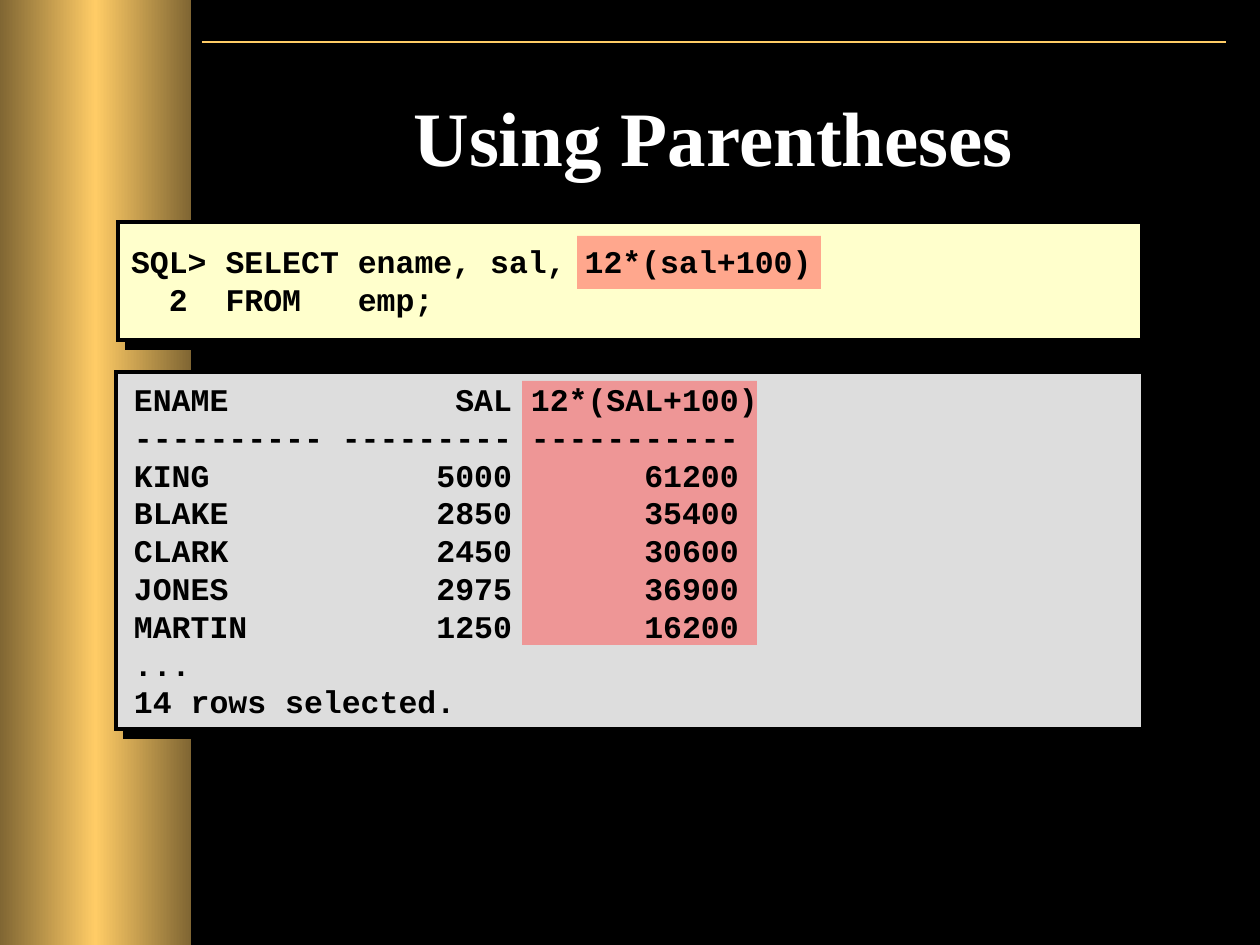
from copy import deepcopy

from lxml.etree import SubElement as sub
from pptx import Presentation
from pptx.dml.color import RGBColor as RGB
from pptx.enum.shapes import MSO_CONNECTOR as LINK, MSO_SHAPE as SHAPE
from pptx.enum.text import MSO_ANCHOR as ANCHOR, MSO_AUTO_SIZE as FIT, PP_ALIGN as ALIGN
from pptx.oxml.ns import qn
from pptx.util import Emu, Pt

SCALE = 914400 / 126
GOLD = "FFCC66"
BROWN = "806633"
QUERY = [
    "SQL> SELECT ename, sal, 12*(sal+100)",
    "  2  FROM   emp;",
]
ROWS = [
    ("KING", 5000, 61200),
    ("BLAKE", 2850, 35400),
    ("CLARK", 2450, 30600),
    ("JONES", 2975, 36900),
    ("MARTIN", 1250, 16200),
]
RESULT = [
    "ENAME            SAL 12*(SAL+100)",
    "---------- --------- -----------",
    *(f"{name:<10} {sal:>9} {total:>11}" for name, sal, total in ROWS),
    "...",
    "14 rows selected.",
]


def px(n):
    return Emu(round(n * SCALE))


def paint(color, code):
    color.rgb = RGB.from_string(code)


def write(frame, lines, size=18, font="Courier New", color="000000",
          align=ALIGN.LEFT, anchor=ANCHOR.TOP):
    frame.word_wrap = True
    frame.auto_size = FIT.NONE
    frame.vertical_anchor = anchor
    frame.margin_left = frame.margin_right = px(13)
    frame.margin_top = frame.margin_bottom = px(6)
    for i, line in enumerate(lines):
        para = frame.add_paragraph() if i else frame.paragraphs[0]
        para.alignment = align
        para.space_before = Pt(0)
        run = para.add_run()
        run.text = line
        run.font.name, run.font.size, run.font.bold = font, Pt(size), True
        paint(run.font.color, color)


def add_text(slide, box, lines, **style):
    write(slide.shapes.add_textbox(*map(px, box)).text_frame, lines, **style)


def add_rect(slide, box, fill):
    rect = slide.shapes.add_shape(SHAPE.RECTANGLE, *map(px, box))
    rect.shadow.inherit = False
    rect.line.fill.background()
    rect.fill.solid()
    paint(rect.fill.fore_color, fill)
    return rect


def add_panel(slide, box, fill):
    panel = add_rect(slide, box, fill)
    paint(panel.line.color, "000000")
    panel.line.width = Pt(2)
    props = panel._element.spPr
    sub(props.find(qn("a:ln")), qn("a:miter"), lim="800000")
    shade = sub(props.find(qn("a:effectLst")), qn("a:outerShdw"),
                dist=str(Pt(7.1)), dir="2700000", algn="ctr", rotWithShape="0")
    sub(shade, qn("a:srgbClr"), val="000000")


def add_mark(slide, box):
    mark = add_rect(slide, box, "FF5050")
    tint = mark._element.spPr.find(qn("a:solidFill"))[0]
    sub(tint, qn("a:alpha"), val="50000")


def add_band(slide, box):
    band = add_rect(slide, box, GOLD)
    band.fill.gradient()
    band.fill.gradient_angle = 0
    stops = band.fill.gradient_stops
    for stop, code, place in zip(stops, (BROWN, GOLD), (0, 0.5)):
        paint(stop.color, code)
        stop.position = place
    group = band._element.spPr.find(qn("a:gradFill")).find(qn("a:gsLst"))
    last = deepcopy(group[0])
    last.set("pos", "100000")
    group.append(last)


def add_rule(slide, ends, color):
    rule = slide.shapes.add_connector(LINK.STRAIGHT, *map(px, ends))
    paint(rule.line.color, color)
    rule.line.width = Pt(1)
    sub(rule._element.spPr, qn("a:effectLst"))


def set_title(slide, box, text):
    title = slide.shapes.title
    title.left, title.top, title.width, title.height = map(px, box)
    write(title.text_frame, [text], size=44, font="Times New Roman",
          color="FFFFFF", align=ALIGN.CENTER)


def main():
    deck = Presentation()
    deck.slide_width, deck.slide_height = px(1260), px(945)
    slide = deck.slides.add_slide(deck.slide_layouts[5])
    slide.background.fill.solid()
    paint(slide.background.fill.fore_color, "000000")

    add_rule(slide, (202, 42, 1226, 42), GOLD)
    add_band(slide, (0, 0, 191, 945))
    add_panel(slide, (118, 222, 1024, 118), "FFFFCC")
    add_panel(slide, (116, 372, 1027, 357), "DDDDDD")
    set_title(slide, (200, 84, 1027, 158), "Using Parentheses")
    add_mark(slide, (577, 236, 244, 53))
    add_mark(slide, (522, 381, 235, 264))
    add_text(slide, (118, 219, 1028, 122), QUERY, anchor=ANCHOR.MIDDLE)
    add_text(slide, (121, 374, 1023, 353), RESULT)
    deck.save("out.pptx")


if __name__ == "__main__":
    main()
